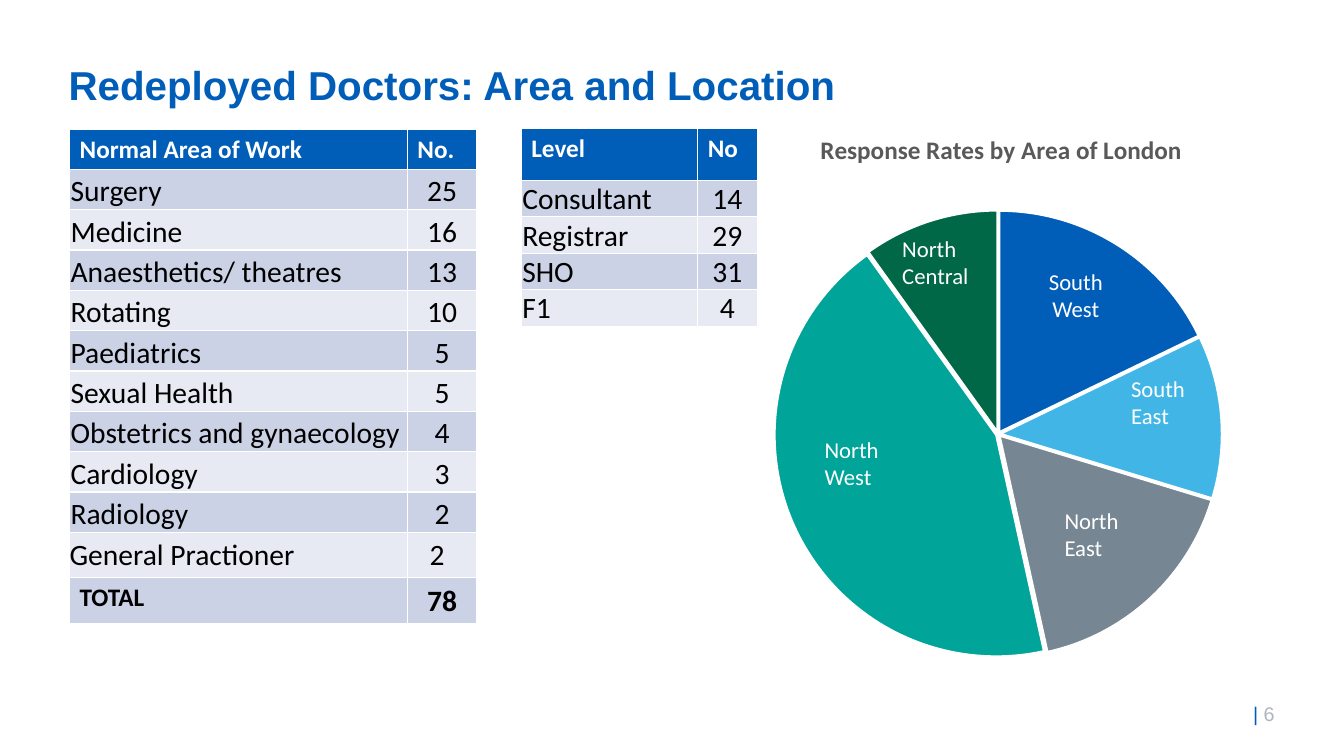
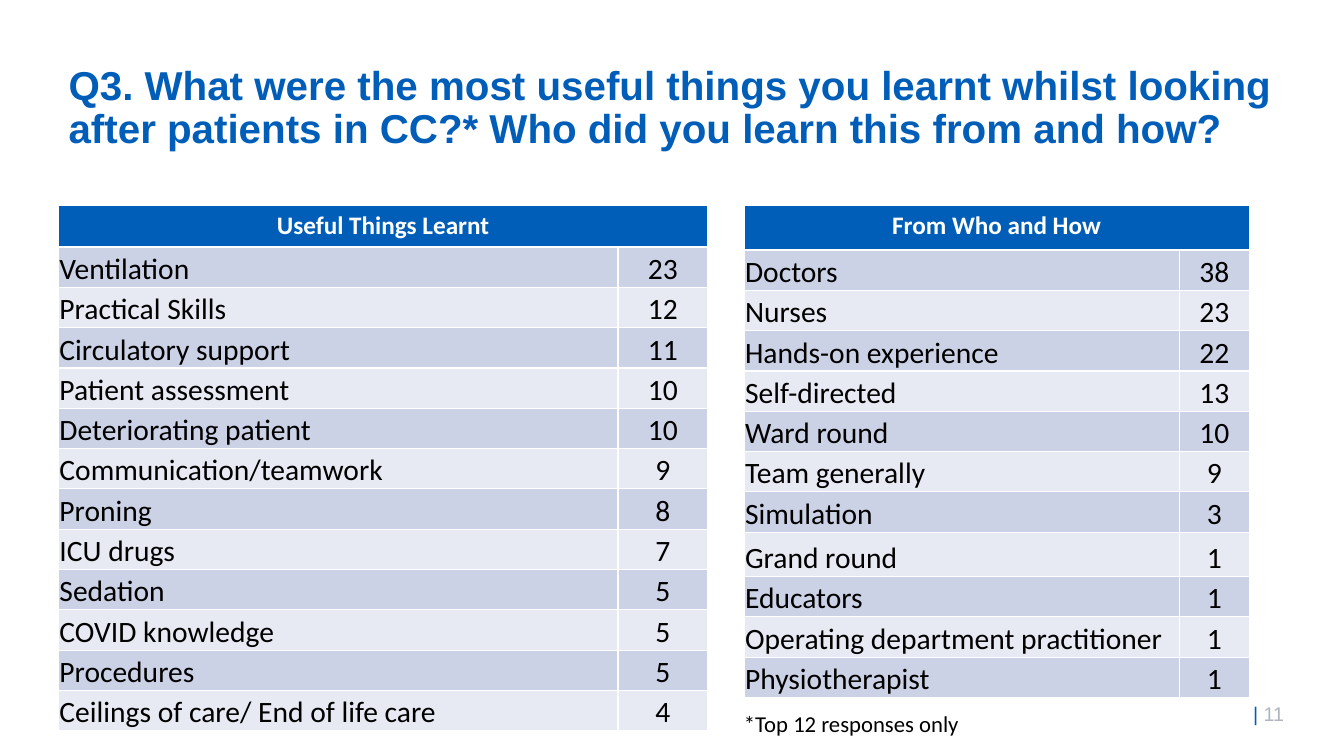
"""Build two survey slides with tables and a pie chart of response rates."""
from pptx import Presentation
from pptx.chart.data import CategoryChartData
from pptx.dml.color import RGBColor
from pptx.enum.chart import XL_CHART_TYPE as ChartType
from pptx.enum.text import MSO_ANCHOR as Anchor, MSO_AUTO_SIZE as AutoSize, PP_ALIGN as Align
from pptx.oxml import parse_xml
from pptx.oxml.ns import nsdecls, qn
from pptx.util import Inches, Pt

BLUE = RGBColor(0x00, 0x5E, 0xB8)
SKY = RGBColor(0x41, 0xB6, 0xE6)
SLATE = RGBColor(0x76, 0x86, 0x92)
TEAL = RGBColor(0x00, 0xA4, 0x99)
GREEN = RGBColor(0x00, 0x67, 0x47)
WHITE = RGBColor(0xFF, 0xFF, 0xFF)
BLACK = RGBColor(0x00, 0x00, 0x00)
PAGE_GREY = RGBColor(0xAD, 0xB6, 0xBE)
TITLE_GREY = RGBColor(0x59, 0x59, 0x59)
BANDS = (RGBColor(0xCC, 0xD2, 0xE6), RGBColor(0xE7, 0xEA, 0xF3))


def add_text(slide, left, top, width, height, text, color, align=Align.LEFT):
    shape = slide.shapes.add_textbox(Inches(left), Inches(top), Inches(width), Inches(height))
    frame = shape.text_frame
    frame.word_wrap = True
    frame.text = text
    for paragraph in frame.paragraphs:
        paragraph.alignment = align
        paragraph.font.name = "Calibri"
        paragraph.font.size = Pt(16.2)
        paragraph.font.color.rgb = color


def add_table(slide, left, top, widths, header_height, row_height, headers, rows):
    heights = [header_height] + [row_height] * len(rows)
    table = slide.shapes.add_table(
        len(heights), len(widths), Inches(left), Inches(top),
        Inches(sum(widths)), Inches(sum(heights))).table
    for column, width in zip(table.columns, widths):
        column.width = Inches(width)
    for row, height in zip(table.rows, heights):
        row.height = Inches(height)
    if len(headers) == 1:
        table.cell(0, 0).merge(table.cell(0, 1))
    for row_index, values in enumerate([headers] + rows):
        for column_index, value in enumerate(values):
            cell = table.cell(row_index, column_index)
            cell.text = str(value)
            cell.fill.solid()
            paragraph = cell.text_frame.paragraphs[0]
            paragraph.font.name = "Calibri"
            if row_index == 0:
                cell.fill.fore_color.rgb = BLUE
                paragraph.font.size = Pt(18)
                paragraph.font.bold = True
                paragraph.font.color.rgb = WHITE
                paragraph.alignment = Align.CENTER if len(headers) == 1 else Align.LEFT
            else:
                cell.fill.fore_color.rgb = BANDS[(row_index - 1) % 2]
                cell.vertical_anchor = Anchor.BOTTOM
                cell.margin_left = cell.margin_right = cell.margin_top = Inches(0.01)
                cell.margin_bottom = 0
                paragraph.font.size = Pt(21.1)
                paragraph.font.color.rgb = BLACK
                paragraph.alignment = Align.CENTER if column_index else Align.LEFT
    return table


presentation = Presentation()
presentation.slide_width = Inches(13.33)
presentation.slide_height = Inches(7.5)

slides = []
for title, number in (
    ("Redeployed Doctors: Area and Location", "6"),
    ("Q3. What were the most useful things you learnt whilst looking after patients in CC?* "
     "Who did you learn this from and how?", "11"),
):
    slide = presentation.slides.add_slide(presentation.slide_layouts[5])
    slides.append(slide)
    shape = slide.shapes.title
    shape.left, shape.top = Inches(0.58), Inches(0.6)
    shape.width, shape.height = Inches(12.18), Inches(0.67)
    frame = shape.text_frame
    frame.text = title
    frame.word_wrap = True
    frame.auto_size = AutoSize.NONE
    frame.vertical_anchor = Anchor.TOP
    paragraph = frame.paragraphs[0]
    paragraph.alignment = Align.LEFT
    paragraph.line_spacing = 0.9
    paragraph.font.name = "Arial"
    paragraph.font.size = Pt(28.8)
    paragraph.font.bold = True
    paragraph.font.color.rgb = BLUE

    page_box = slide.shapes.add_textbox(Inches(12.33), Inches(6.91), Inches(0.94), Inches(0.34))
    paragraph = page_box.text_frame.paragraphs[0]
    paragraph.font.name = "Arial"
    paragraph.font.size = Pt(14.1)
    for text, color in (("| ", BLUE), (number, PAGE_GREY)):
        run = paragraph.add_run()
        run.text = text
        run.font.color.rgb = color

location_slide, learning_slide = slides

areas = [
    ("Surgery", 25), ("Medicine", 16), ("Anaesthetics/ theatres", 13), ("Rotating", 10),
    ("Paediatrics", 5), ("Sexual Health", 5), ("Obstetrics and gynaecology", 4),
    ("Cardiology", 3), ("Radiology", 2), ("General Practioner", 2), ("TOTAL", 78),
]
area_table = add_table(location_slide, 0.69, 1.28, (3.35, 0.69), 0.38, 0.4,
                       ("Normal Area of Work", "No."), areas)
for row_index, left_margin in ((10, 0), (11, 0.1)):
    for cell in area_table.rows[row_index].cells:
        cell.vertical_anchor = Anchor.TOP
        cell.margin_left, cell.margin_right = Inches(left_margin), Inches(0.1)
        cell.margin_top = cell.margin_bottom = Inches(0.05)
for cell, size in zip(area_table.rows[11].cells, (18, 21.1)):
    cell.text_frame.paragraphs[0].font.bold = True
    cell.text_frame.paragraphs[0].font.size = Pt(size)

levels = [("Consultant", 14), ("Registrar", 29), ("SHO", 31), ("F1", 4)]
add_table(location_slide, 5.17, 1.27, (1.75, 0.59), 0.52, 0.35, ("Level", "No"), levels)

chart_data = CategoryChartData()
chart_data.categories = ["1", "2", "3", "4", "5"]
chart_data.add_series("Series 1", (18, 12, 17, 44, 10))
chart = location_slide.shapes.add_chart(
    ChartType.PIE, Inches(7.52), Inches(0.82), Inches(4.76), Inches(6.34), chart_data).chart
chart.has_legend = False
chart.font.name = "Calibri"
chart.font.size = Pt(10)
chart.font.color.rgb = BLACK
chart.has_title = True
chart.chart_title.text_frame.text = "Response Rates by Area of London"
paragraph = chart.chart_title.text_frame.paragraphs[0]
paragraph.font.name = "Calibri"
paragraph.font.size = Pt(18)
paragraph.font.bold = True
paragraph.font.color.rgb = TITLE_GREY

plot = chart.plots[0]
plot.vary_by_categories = True
series = plot.series[0]
for index, color in enumerate((BLUE, SKY, SLATE, TEAL, GREEN)):
    point_format = series.points[index].format
    point_format.fill.solid()
    point_format.fill.fore_color.rgb = color
    point_format.line.color.rgb = WHITE
    point_format.line.width = Pt(1.5)
explosion = parse_xml(f'<c:explosion {nsdecls("c")} val="1"/>')
series._element.find(qn("c:dPt")).addprevious(explosion)

title_element = chart.chart_title._element
plot_area = chart._chartSpace.chart.plotArea
for parent, target, values in (
    (title_element, "", {"x": 0.12, "y": 0.07}),
    (plot_area, '<c:layoutTarget val="inner"/>', {"x": 0.03, "y": 0.2, "w": 0.94, "h": 0.7}),
):
    for old_layout in parent.findall(qn("c:layout")):
        parent.remove(old_layout)
    modes = "".join(f'<c:{key}Mode val="edge"/>' for key in "xy")
    sizes = "".join(f'<c:{key} val="{value}"/>' for key, value in values.items())
    layout = parse_xml(f'<c:layout {nsdecls("c")}><c:manualLayout>{target}{modes}{sizes}'
                       '</c:manualLayout></c:layout>')
    if parent is title_element:
        parent.find(qn("c:overlay")).addprevious(layout)
    else:
        parent.insert(0, layout)

for left, top, width, text, align in (
    (10.46, 4.98, 0.9, "North\nEast", Align.LEFT),
    (8.08, 4.27, 0.9, "North\nWest", Align.LEFT),
    (11.12, 3.67, 0.9, "South\nEast", Align.LEFT),
    (10.22, 2.61, 0.9, "South\nWest", Align.CENTER),
    (8.85, 2.28, 0.9, "North\nCentral", Align.LEFT),
):
    add_text(location_slide, left, top, width, 0.65, text, WHITE, align)

things_learnt = [
    ("Ventilation", 23), ("Practical Skills", 12), ("Circulatory support", 11),
    ("Patient assessment", 10), ("Deteriorating patient", 10), ("Communication/teamwork", 9),
    ("Proning", 8), ("ICU drugs", 7), ("Sedation", 5), ("COVID knowledge", 5),
    ("Procedures", 5), ("Ceilings of care/ End of life care", 4),
]
add_table(learning_slide, 0.58, 2.04, (5.55, 0.89), 0.41, 0.4,
          ("Useful Things Learnt",), things_learnt)

teachers = [
    ("Doctors", 38), ("Nurses", 23), ("Hands-on experience", 22), ("Self-directed", 13),
    ("Ward round", 10), ("Team generally", 9), ("Simulation", 3), ("Grand round", 1),
    ("Educators", 1), ("Operating department practitioner", 1), ("Physiotherapist", 1),
]
teacher_table = add_table(learning_slide, 7.38, 2.04, (4.32, 0.69), 0.44, 0.4,
                          ("From Who and How",), teachers)
teacher_table.rows[8].height = Inches(0.44)
add_text(learning_slide, 7.28, 6.99, 2.4, 0.37, "*Top 12 responses only", BLACK)

presentation.save("out.pptx")
